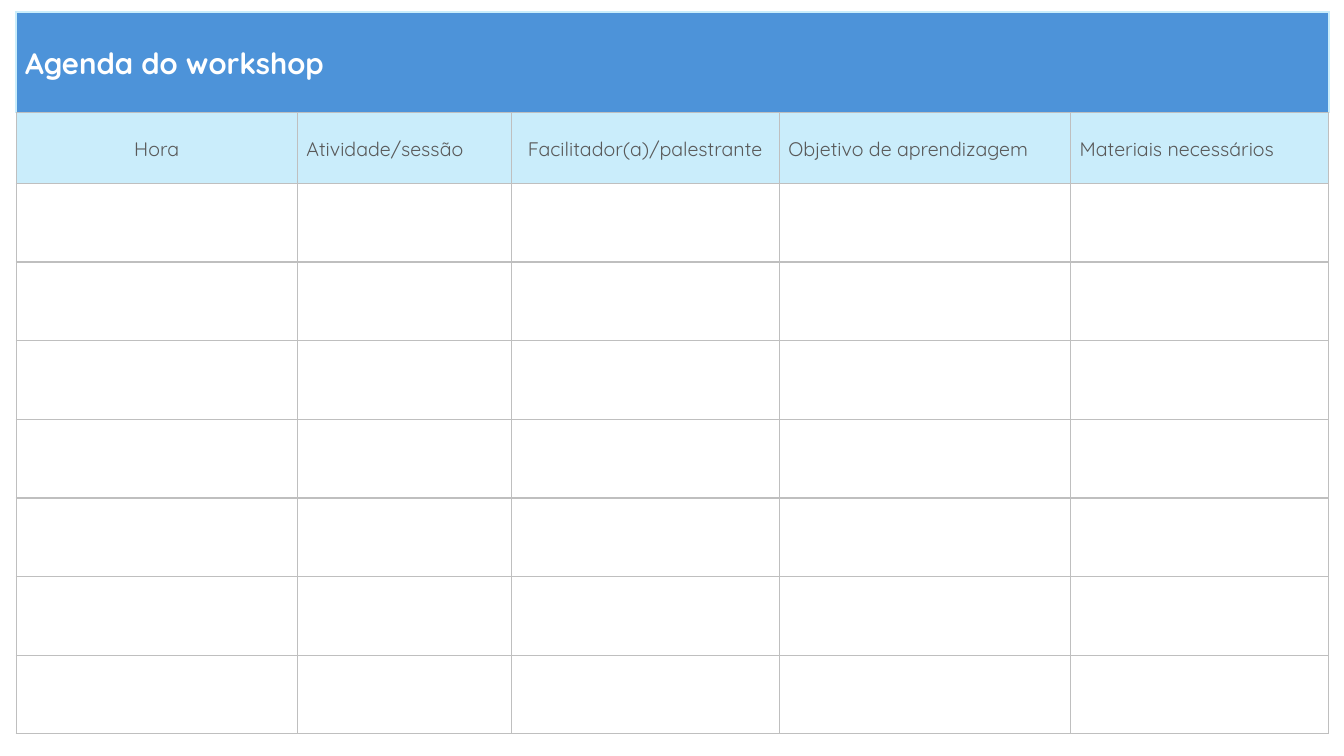
from dataclasses import dataclass

from lxml import etree
from pptx import Presentation
from pptx.dml.color import RGBColor
from pptx.enum import text
from pptx.oxml import ns
from pptx.table import _Cell
from pptx.util import Inches, Pt

FONT = "Quicksand"
WHITE = RGBColor(0xFF, 0xFF, 0xFF)
BLUE = RGBColor(0x4D, 0x93, 0xD9)
PALE_BLUE = RGBColor(0xCA, 0xED, 0xFB)
DARK_GRAY = RGBColor(0x59, 0x59, 0x59)
GRID_GRAY = RGBColor(0xBF, 0xBF, 0xBF)

LEFT, TOP = 0.16, 0.12
TITLE_HEIGHT, HEADER_HEIGHT, SESSION_HEIGHT = 1, 0.7, 0.78
SESSION_COUNT = 7


@dataclass(frozen=True)
class Column:
    label: str
    width: float
    centered: bool = False


@dataclass(frozen=True)
class Border:
    color: RGBColor
    width: float


COLUMNS = [
    Column("Hora", 2.79, centered=True),
    Column("Atividade/sessão", 2.12),
    Column("Facilitador(a)/palestrante", 2.66, centered=True),
    Column("Objetivo de aprendizagem", 2.89),
    Column("Materiais necessários", 2.56),
]
GRID = Border(GRID_GRAY, 1)
TITLE_EDGE = Border(PALE_BLUE, 1.5)


def set_borders(cell: _Cell, left: Border, right: Border, top: Border, bottom: Border) -> None:
    """Add the four cell lines, which must come before the fill."""
    tc_pr = cell._tc.get_or_add_tcPr()
    sides = (("L", left), ("R", right), ("T", top), ("B", bottom))
    for i, (side, border) in enumerate(sides):
        ln = etree.Element(ns.qn(f"a:ln{side}"), w=str(Pt(border.width)))
        fill = etree.SubElement(ln, ns.qn("a:solidFill"))
        etree.SubElement(fill, ns.qn("a:srgbClr"), val=str(border.color))
        tc_pr.insert(i, ln)


def write_cell(cell: _Cell, label: str, size: float, color: RGBColor, fill: RGBColor,
               bold: bool = False, centered: bool = False) -> None:
    cell.fill.solid()
    cell.fill.fore_color.rgb = fill
    cell.vertical_anchor = text.MSO_ANCHOR.MIDDLE
    cell.margin_left = Inches(0.01 if centered else 0.09)
    cell.margin_right = cell.margin_top = Inches(0.01)
    cell.margin_bottom = Inches(0)
    p = cell.text_frame.paragraphs[0]
    p.alignment = text.PP_ALIGN.CENTER if centered else text.PP_ALIGN.LEFT
    r = p.add_run()
    r.text = label
    r.font.name = FONT
    r.font.size = Pt(size)
    r.font.bold = bold
    r.font.color.rgb = color


def main() -> None:
    prs = Presentation()
    prs.slide_width, prs.slide_height = Inches(13.33), Inches(7.5)
    s = prs.slides.add_slide(prs.slide_layouts[6])

    # Table grid
    heights = [TITLE_HEIGHT, HEADER_HEIGHT] + [SESSION_HEIGHT] * SESSION_COUNT
    width = sum(column.width for column in COLUMNS)
    table = s.shapes.add_table(len(heights), len(COLUMNS), Inches(LEFT), Inches(TOP),
                               Inches(width), Inches(sum(heights))).table
    table.first_row = table.horz_banding = False
    for row, height in zip(table.rows, heights):
        row.height = Inches(height)
        for cell in row.cells:
            cell.fill.background()

    # Title row
    title = table.cell(0, 0)
    title.merge(table.cell(0, len(COLUMNS) - 1))
    write_cell(title, "Agenda do workshop", 21, WHITE, BLUE, bold=True)

    # Column headers
    for i, column in enumerate(COLUMNS):
        table.columns[i].width = Inches(column.width)
        write_cell(table.cell(1, i), column.label, 14, DARK_GRAY, PALE_BLUE,
                   centered=column.centered)

    # Borders
    for i, row in enumerate(table.rows):
        edge = TITLE_EDGE if i == 0 else GRID
        for cell in row.cells:
            set_borders(cell, left=edge, right=edge, top=edge, bottom=GRID)

    prs.save("out.pptx")


if __name__ == "__main__":
    main()
